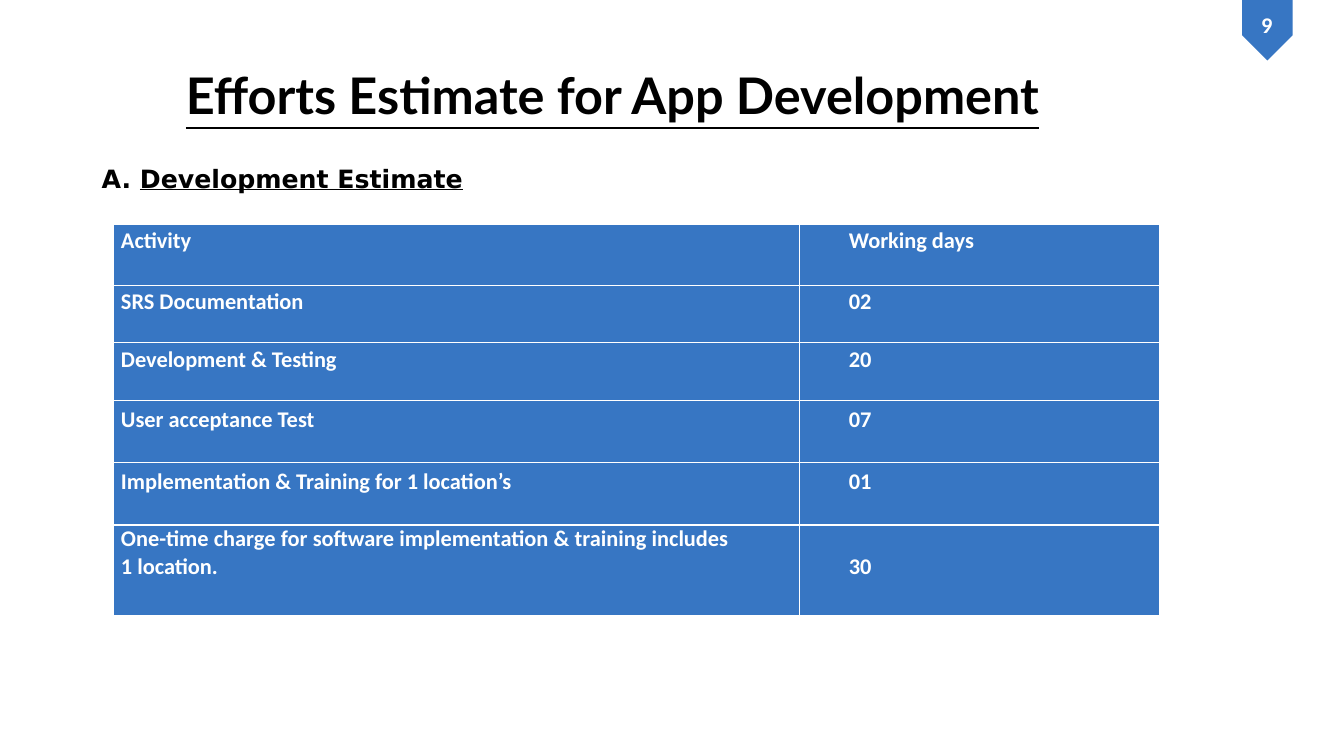
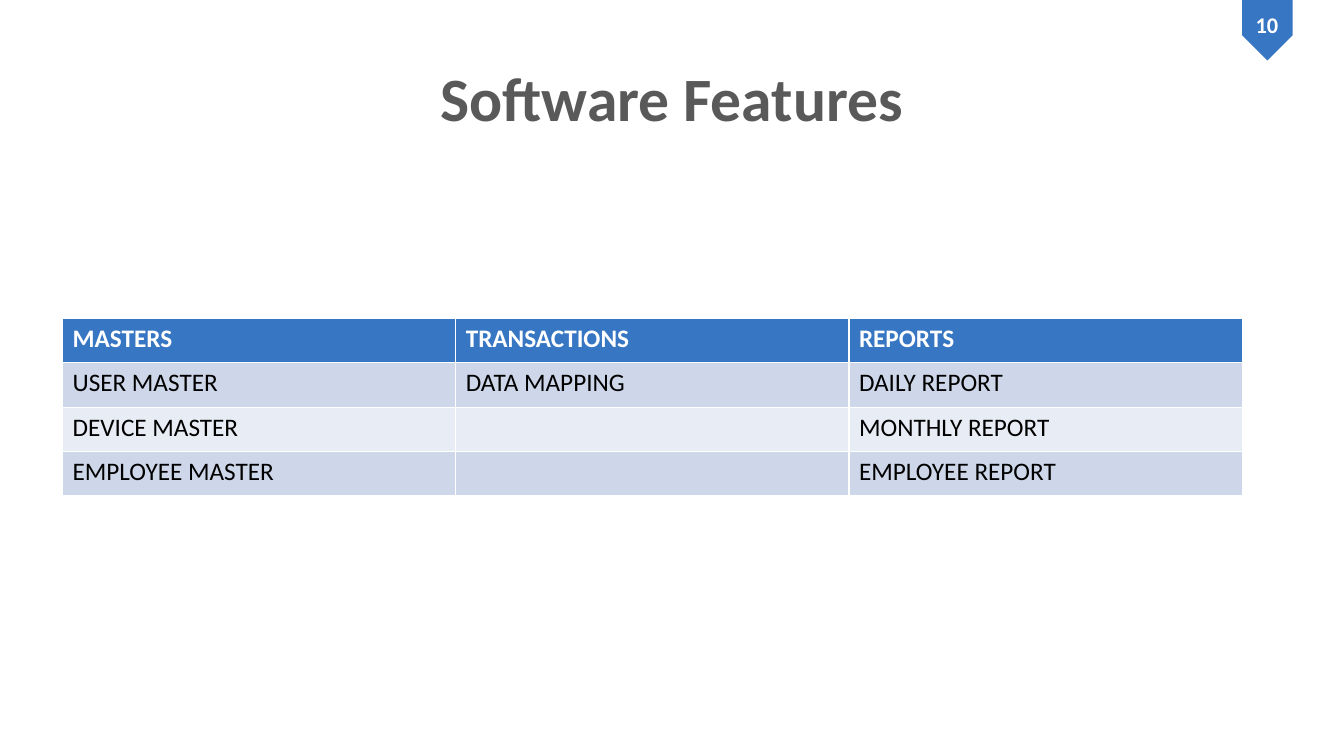
from dataclasses import dataclass

from lxml import etree
from pptx import Presentation
from pptx.dml.color import RGBColor
from pptx.enum.shapes import MSO_SHAPE
from pptx.enum.text import PP_ALIGN
from pptx.oxml.ns import qn
from pptx.util import Inches, Pt

LEFT, MID, JUST = PP_ALIGN.LEFT, PP_ALIGN.CENTER, PP_ALIGN.JUSTIFY
PLATE = MSO_SHAPE.PENTAGON


@dataclass(frozen=True)
class Theme:
    blue: str = "3776C3"
    band: str = "CED6E9"
    pale: str = "E8ECF5"
    gray: str = "595959"
    black: str = "000000"
    white: str = "FFFFFF"
    body: str = "Calibri"
    wide: str = "Lato"
    sub: str = "DejaVu Sans"
    small: int = 16
    text: int = 18
    head: int = 36
    large: int = 44


T = Theme()
SIZE = (13.33, 7.5)

HEADS = [
    {"page": "9", "text": "Efforts Estimate for App Development",
     "at": (0.17, 0.66, 11.81, 0.73),
     "font": {"name": T.wide, "size": T.head, "color": T.black,
              "bold": True, "underline": True}},
    {"page": "10", "text": "Software Features",
     "at": (0.76, 0.63, 11.81, 0.73),
     "font": {"name": T.body, "size": T.large, "color": T.gray,
              "bold": True}},
]

SUB = "Development Estimate"

# Activity, working days, row height (in), space above the text (pt)
EFFORT = [
    ("Activity", "Working days", 0.6, 1.9),
    ("SRS Documentation", "02", 0.57, 2.4),
    ("Development & Testing", "20", 0.57, 2.4),
    ("User acceptance Test", "07", 0.62, 4),
    ("Implementation & Training for 1 location’s", "01", 0.62, 3.8),
    ("One-time charge for software implementation & training includes "
     "1 location.", "30", 0.9, 0.3),
]

FEATURES = [
    ("MASTERS", "TRANSACTIONS", "REPORTS"),
    ("USER MASTER", "DATA MAPPING", "DAILY REPORT"),
    ("DEVICE MASTER", "", "MONTHLY REPORT"),
    ("EMPLOYEE MASTER", "", "EMPLOYEE REPORT"),
]


def box(at):
    return [Inches(v) for v in at]


def style(font, form):
    for key, val in form.items():
        if key == "color":
            font.color.rgb = RGBColor.from_string(val)
        else:
            setattr(font, key, Pt(val) if key == "size" else val)


def paint(part, color):
    part.fill.solid()
    part.fill.fore_color.rgb = RGBColor.from_string(color)


def write(frame, text, form, align=LEFT):
    para = frame.paragraphs[0]
    para.alignment = align
    run = para.add_run()
    run.text = text
    style(run.font, form)
    return para


def label(slide, at, text, form, align=LEFT):
    frame = slide.shapes.add_textbox(*box(at)).text_frame
    frame.word_wrap = True
    return write(frame, text, form, align)


def badge(slide, page):
    tag = slide.shapes.add_shape(PLATE, *box((12.27, 0.05, 0.6, 0.5)))
    tag.rotation = 90
    tag.shadow.inherit = False
    paint(tag, T.blue)
    tag.line.fill.background()
    label(slide, (12.26, 0.06, 0.61, 0.37), page,
          {"name": T.body, "size": T.small, "color": T.white, "bold": True},
          MID)


def start(deck, head):
    """Add a slide with its page badge and title."""
    slide = deck.slides.add_slide(deck.slide_layouts[6])
    badge(slide, head["page"])
    title = label(slide, head["at"], head["text"], head["font"], MID)
    title.line_spacing = 0.9
    return slide


def letter(para):
    """Number the paragraph A., B., C. with a hanging indent."""
    props = para._p.get_or_add_pPr()
    props.set("marL", str(Inches(0.88)))
    props.set("indent", str(Inches(-0.38)))
    etree.SubElement(props, qn("a:buFont"), typeface=T.sub)
    etree.SubElement(props, qn("a:buAutoNum"), type="alphaUcPeriod")


def grid(slide, left, top, cols, rows):
    table = slide.shapes.add_table(
        len(rows), len(cols),
        *box((left, top, sum(cols), sum(rows)))).table
    for col, width in zip(table.columns, cols):
        col.width = Inches(width)
    for row, height in zip(table.rows, rows):
        row.height = Inches(height)
    return table


def effort(slide):
    para = label(slide, (0.41, 1.57, 5.07, 0.4), SUB,
                 {"name": T.sub, "size": T.text, "color": T.black,
                  "bold": True, "underline": True})
    letter(para)
    table = grid(slide, 1.12, 2.23, (6.81, 3.57), [r[2] for r in EFFORT])
    table.last_row = True
    form = {"name": T.body, "size": T.small, "color": T.white, "bold": True}
    pads = ((0.08, 0.7), (0.49, 0))
    final = len(EFFORT) - 1
    for y, (task, days, _, gap) in enumerate(EFFORT):
        for x, text in enumerate((task, days)):
            cell = table.cell(y, x)
            paint(cell, T.blue)
            # The total lines up with the second line of its label
            drop = 1.22 * T.small if (y, x) == (final, 1) else 0
            cell.margin_left, cell.margin_right = box(pads[x])
            cell.margin_top, cell.margin_bottom = Pt(gap + drop), 0
            write(cell.text_frame, text, form, JUST)


def features(slide):
    table = grid(slide, 0.62, 3.16, [3.9] * 3, [0.44] * len(FEATURES))
    for y, row in enumerate(FEATURES):
        fill = T.blue if y == 0 else T.band if y % 2 else T.pale
        form = {"name": T.body, "size": T.text, "bold": y == 0,
                "color": T.black if y else T.white}
        for x, text in enumerate(row):
            cell = table.cell(y, x)
            paint(cell, fill)
            if text:
                write(cell.text_frame, text, form)


def main():
    deck = Presentation()
    deck.slide_width, deck.slide_height = box(SIZE)
    for head, fill in zip(HEADS, (effort, features)):
        fill(start(deck, head))
    deck.save("out.pptx")


if __name__ == "__main__":
    main()
